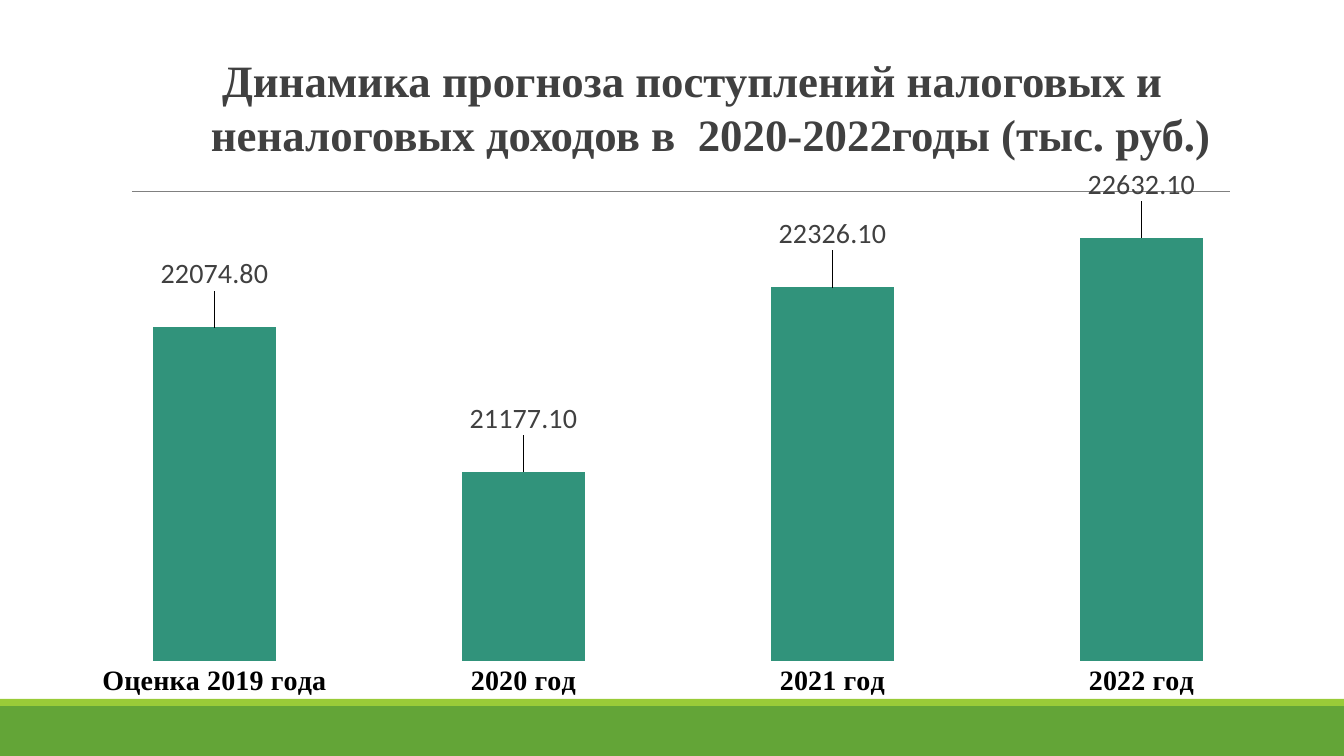
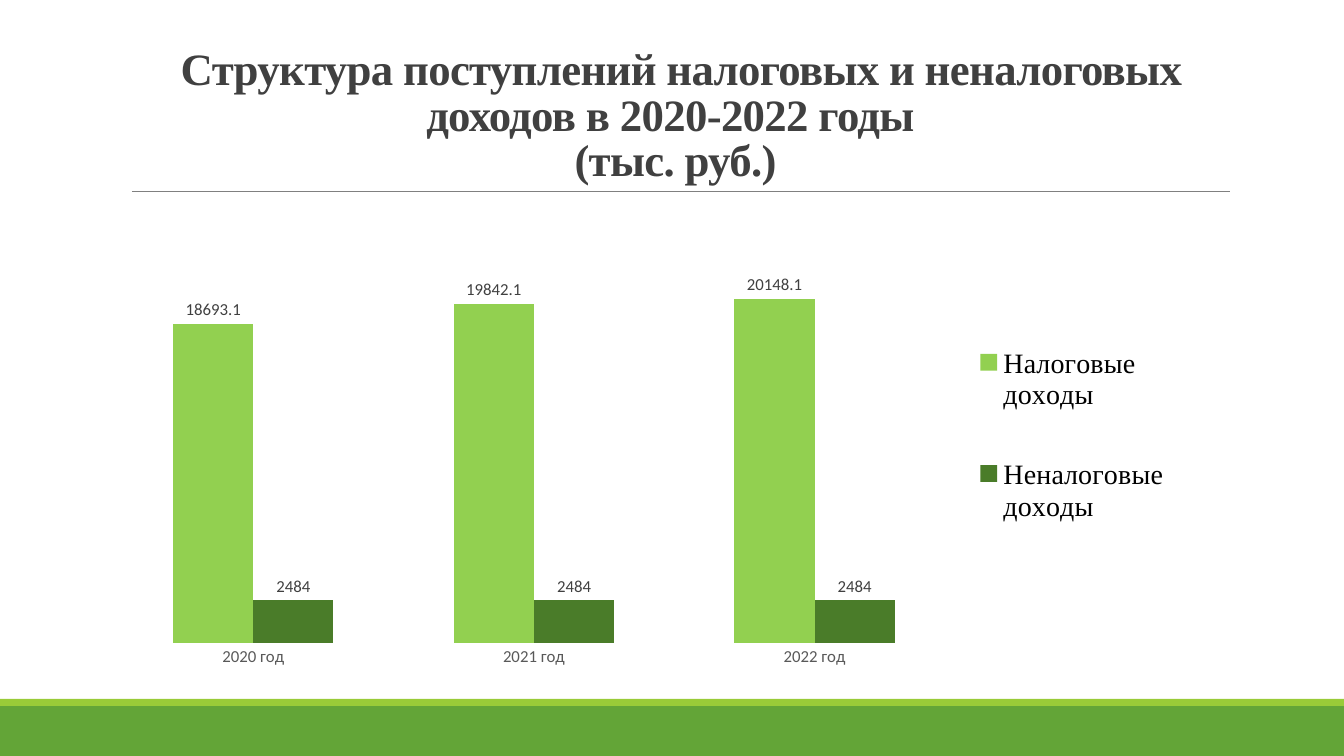
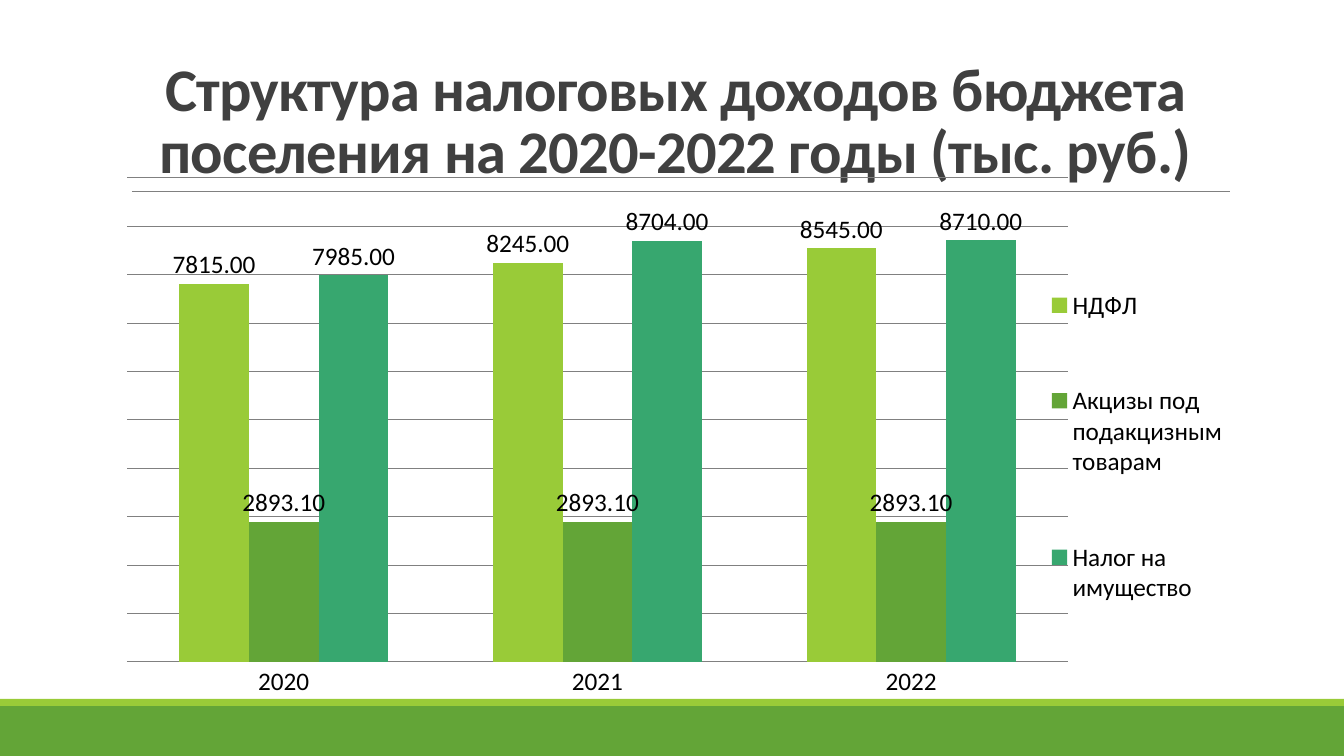
"""Build three slides on the forecast of tax and non-tax budget revenue."""
import lxml.etree
import pptx
import pptx.chart.data
import pptx.dml.color
import pptx.enum.chart
import pptx.enum.shapes
import pptx.enum.text
import pptx.oxml.ns
import pptx.util

PX = 914400 / 100.8
RGBColor = pptx.dml.color.RGBColor
qn = pptx.oxml.ns.qn
WHITE = RGBColor(0xFF, 0xFF, 0xFF)
BLACK = RGBColor(0x00, 0x00, 0x00)
CHARCOAL = RGBColor(0x40, 0x40, 0x40)
SLATE = RGBColor(0x59, 0x59, 0x59)
GRAY = RGBColor(0x80, 0x80, 0x80)
GREEN = RGBColor(0x63, 0xA5, 0x37)
LIME = RGBColor(0x99, 0xCB, 0x38)
TEAL = RGBColor(0x31, 0x93, 0x7B)
LIGHT_GREEN = RGBColor(0x92, 0xD0, 0x50)
DARK_GREEN = RGBColor(0x4A, 0x7C, 0x29)
SEA_GREEN = RGBColor(0x37, 0xA7, 0x6F)
SANS, SERIF = "Calibri", "Times New Roman"

BANDS = [(GREEN, (0, 706, 1344, 50)), (LIME, (0, 699, 1344, 7))]
RULE = (132, 191, 1230, 191)
CENTERED = {
    "box": (121, 31, 1109, 160),
    "anchor": pptx.enum.text.MSO_ANCHOR.BOTTOM,
    "para": {"alignment": pptx.enum.text.PP_ALIGN.CENTER, "line_spacing": 0.85},
    "spacing": "-50",
}
PAGES = [
    {
        "title": " Динамика прогноза поступлений налоговых и неналоговых доходов в  2020-2022годы (тыс. руб.)",
        "title_font": {"name": SERIF, "size": 32},
        "title_style": {
            "box": (201, 48, 1088, 119),
            "anchor": pptx.enum.text.MSO_ANCHOR.TOP,
            "para": {},
            "spacing": "0",
        },
        "chart": (34, 167, 1286, 540),
        "plot": (60, 178, 1236, 483),
        "legend": None,
        "scale": {"minimum_scale": 20000, "maximum_scale": 23000, "major_unit": 500},
        "grid": WHITE,
        "axis_line": None,
        "format": "0.00",
        "axis_font": {"name": SERIF, "size": 20, "bold": True, "color": BLACK},
        "label_font": {"name": SANS, "size": 20, "color": CHARCOAL},
        "label_lift": 32,
        "categories": ["Оценка 2019 года", "2020 год", "2021 год", "2022 год"],
        "series": [("Series 1", TEAL, (22074.8, 21177.1, 22326.1, 22632.1))],
    },
    {
        "title": " Структура поступлений налоговых и неналоговых доходов в 2020-2022 годы \v(тыс. руб.)",
        "title_font": {"name": SERIF, "size": 32},
        "title_style": CENTERED,
        "chart": (71, 211, 1165, 473),
        "plot": (113, 216, 842, 427),
        "legend": (970, 300, 204, 271),
        "legend_font": {"name": SERIF, "size": 20, "color": BLACK},
        "scale": {"minimum_scale": 0, "maximum_scale": 25000, "major_unit": 5000},
        "grid": None,
        "axis_line": None,
        "format": "General",
        "axis_font": {"name": SANS, "size": 12, "color": SLATE},
        "label_font": {"name": SANS, "size": 12, "color": CHARCOAL},
        "label_lift": 0,
        "categories": ["2020 год", "2021 год", "2022 год"],
        "series": [
            ("Налоговые доходы", LIGHT_GREEN, (18693.1, 19842.1, 20148.1)),
            ("Неналоговые доходы", DARK_GREEN, (2484, 2484, 2484)),
        ],
    },
    {
        "title": "Структура налоговых доходов бюджета поселения на 2020-2022 годы (тыс. руб.)",
        "title_font": {"name": SANS, "size": 43.2},
        "title_style": CENTERED,
        "chart": (50, 61, 1238, 671),
        "plot": (127, 178, 941, 484),
        "legend": (1042, 225, 190, 443),
        "legend_font": {"name": SANS, "size": 18, "color": BLACK},
        "scale": {"minimum_scale": 0, "maximum_scale": 10000, "major_unit": 1000},
        "grid": GRAY,
        "axis_line": GRAY,
        "format": "0.00",
        "axis_font": {"name": SANS, "size": 18, "color": BLACK},
        "label_font": {"name": SANS, "size": 18, "color": BLACK},
        "label_lift": 0,
        "categories": ["2020", "2021", "2022"],
        "series": [
            ("НДФЛ", LIME, (7815, 8245, 8545)),
            ("Акцизы под подакцизным товарам", GREEN, (2893.1, 2893.1, 2893.1)),
            ("Налог на имущество", SEA_GREEN, (7985, 8704, 8710)),
        ],
    },
]


def set_font(font, values):
    for name, value in values.items():
        if name == "color":
            font.color.rgb = value
        else:
            setattr(font, name, pptx.util.Pt(value) if name == "size" else value)


def make_layout(values):
    layout = lxml.etree.Element(qn("c:layout"))
    manual = lxml.etree.SubElement(layout, qn("c:manualLayout"))
    for name, value in values.items():
        lxml.etree.SubElement(manual, qn("c:" + name)).set("val", str(value))
    return layout


deck = pptx.Presentation()
deck.slide_width, deck.slide_height = round(1344 * PX), round(756 * PX)

for page in PAGES:
    slide = deck.slides.add_slide(deck.slide_layouts[6])
    for color, area in BANDS:
        band = slide.shapes.add_shape(
            pptx.enum.shapes.MSO_SHAPE.RECTANGLE, *[round(v * PX) for v in area]
        )
        band.shadow.inherit = False
        band.fill.solid()
        band.fill.fore_color.rgb = color
        band.line.fill.background()
    rule = slide.shapes.add_connector(
        pptx.enum.shapes.MSO_CONNECTOR.STRAIGHT, *[round(v * PX) for v in RULE]
    )
    rule.line.color.rgb = GRAY
    rule.line.width = pptx.util.Pt(0.5)
    lxml.etree.SubElement(rule.element.spPr, qn("a:effectLst"))

    style = page["title_style"]
    title = slide.shapes.add_textbox(*[round(v * PX) for v in style["box"]])
    title.text_frame.word_wrap = True
    title.text_frame.vertical_anchor = style["anchor"]
    para = title.text_frame.paragraphs[0]
    para.text = page["title"]
    for name, value in style["para"].items():
        setattr(para, name, value)
    for span in para.runs:
        set_font(span.font, {"bold": True, "color": CHARCOAL, **page["title_font"]})
        span.font._element.set("spc", style["spacing"])

    data = pptx.chart.data.CategoryChartData(number_format=page["format"])
    data.categories = page["categories"]
    for name, color, values in page["series"]:
        data.add_series(name, values)
    chart = slide.shapes.add_chart(
        pptx.enum.chart.XL_CHART_TYPE.COLUMN_CLUSTERED,
        *[round(v * PX) for v in page["chart"]],
        data,
    ).chart
    chart.has_title = False
    set_font(chart.font, {"name": SANS, "size": 10, "color": BLACK})

    category_axis, value_axis = chart.category_axis, chart.value_axis
    category_axis.major_tick_mark = pptx.enum.chart.XL_TICK_MARK.NONE
    set_font(category_axis.tick_labels.font, page["axis_font"])
    if page["axis_line"] is None:
        category_axis.format.line.fill.background()
    else:
        category_axis.format.line.color.rgb = page["axis_line"]
    value_axis.visible = False
    value_axis.has_major_gridlines = page["grid"] is not None
    if page["grid"] is not None:
        value_axis.major_gridlines.format.line.color.rgb = page["grid"]
        value_axis.major_gridlines.format.line.width = pptx.util.Pt(0.75)
    for name, value in page["scale"].items():
        setattr(value_axis, name, value)

    plot = chart.plots[0]
    for name, value in {"gap_width": 150, "overlap": 0, "vary_by_categories": False}.items():
        setattr(plot, name, value)
    for series, (name, color, values) in zip(plot.series, page["series"]):
        series.format.fill.solid()
        series.format.fill.fore_color.rgb = color
        labels = series.data_labels
        for field, value in {
            "show_value": True,
            "number_format": page["format"],
            "number_format_is_linked": False,
            "position": pptx.enum.chart.XL_LABEL_POSITION.OUTSIDE_END,
        }.items():
            setattr(labels, field, value)
        set_font(labels.font, page["label_font"])
        if page["label_lift"]:
            for index in range(len(values)):
                label = series.points[index].data_label
                label.position = pptx.enum.chart.XL_LABEL_POSITION.OUTSIDE_END
                set_font(label.font, page["label_font"])
            lift = round(-page["label_lift"] / page["chart"][3], 2)
            for index_mark in series.data_labels._element.iterfind(qn("c:dLbl") + "/" + qn("c:idx")):
                layout = make_layout({"x": 0, "y": lift})
                index_mark.addnext(layout)
                backing = lxml.etree.Element(qn("c:spPr"))
                fill = lxml.etree.SubElement(backing, qn("a:solidFill"))
                lxml.etree.SubElement(fill, qn("a:srgbClr")).set("val", str(WHITE))
                layout.addnext(backing)

    chart.has_legend = page["legend"] is not None
    if chart.has_legend:
        chart.legend.position = pptx.enum.chart.XL_LEGEND_POSITION.RIGHT
        chart.legend.include_in_layout = False
        set_font(chart.legend.font, page["legend_font"])

    left, top, width, height = page["chart"]
    for part, area in (("plotArea", page["plot"]), ("legend", page["legend"])):
        if area is None:
            continue
        holder = chart.element.find(".//" + qn("c:" + part))
        for old in holder.findall(qn("c:layout")):
            holder.remove(old)
        target = {"layoutTarget": "inner"} if part == "plotArea" else {}
        layout = make_layout({
            **target,
            "xMode": "edge",
            "yMode": "edge",
            "x": (area[0] - left) / width,
            "y": (area[1] - top) / height,
            "w": area[2] / width,
            "h": area[3] / height,
        })
        holder.insert(0 if part == "plotArea" else 1, layout)

deck.save("out.pptx")
